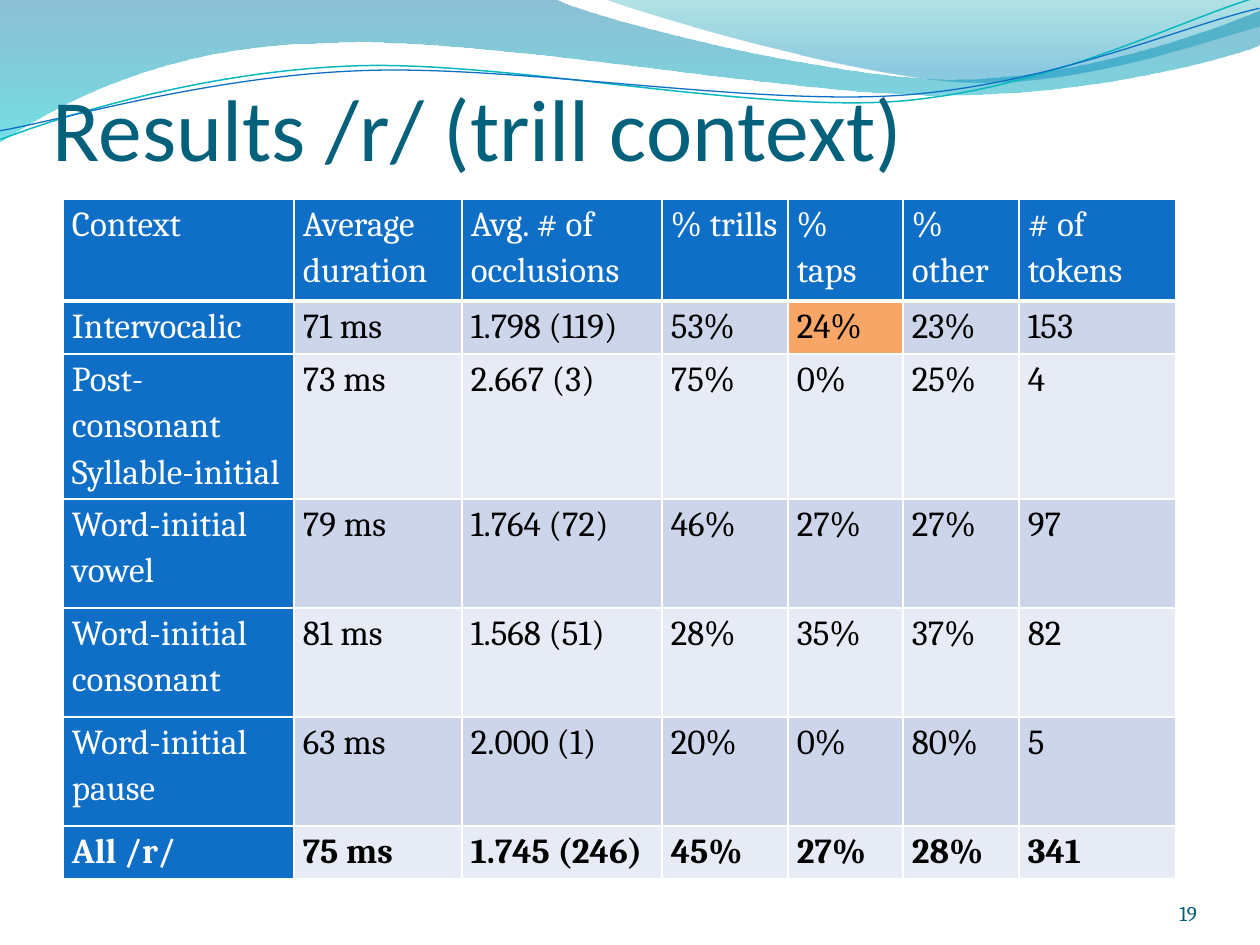
import pptx
import pptx.dml.color
import pptx.enum.text
import pptx.oxml
import pptx.oxml.ns
import pptx.util

PX = 7257
THEME = {
    "title": {"name": "Calibri", "size": 50, "color": "04617B"},
    "number": {"name": "Cambria", "size": 12, "color": "045D75"},
    "header": {"name": "Cambria", "size": 20, "color": "FFFFFF"},
    "body": {"name": "Cambria", "size": 20, "color": "000000"},
    "heading_fill": "0F6FC6",
    "bands": ["CCD5EA", "E7EBF5"],
    "highlight": "F8A668",
    "border": "FFFFFF",
}


def write_text(frame, text, style, paragraph_format, bold=False):
    frame.word_wrap = True
    for index, line in enumerate(text.split("\n")):
        paragraph = frame.paragraphs[0] if index == 0 else frame.add_paragraph()
        for name, value in paragraph_format.items():
            setattr(paragraph, name, value)
        run = paragraph.add_run()
        run.text = line
        font_values = {"name": style["name"], "size": pptx.util.Pt(style["size"]), "bold": bold}
        for name, value in font_values.items():
            setattr(run.font, name, value)
        run.font.color.rgb = pptx.dml.color.RGBColor.from_string(style["color"])


def trace_outline(shapes, start, segments, close):
    points = [segment[i:i + 2] for segment in segments for i in range(0, len(segment), 2)]
    builder = shapes.build_freeform(*start, scale=float(PX))
    builder.add_line_segments(points, close=close)
    shape = builder.convert_to_shape()
    shape.shadow.inherit = False
    lines = iter(list(shape._element.iter(pptx.oxml.ns.qn("a:lnTo"))))
    for segment in segments:
        line = next(lines)
        if len(segment) == 6:
            curve = pptx.oxml.parse_xml(f'<a:cubicBezTo {pptx.oxml.ns.nsdecls("a")}/>')
            line.addprevious(curve)
            for part in (line, next(lines), next(lines)):
                curve.append(part[0])
                part.getparent().remove(part)
    return shape


presentation = pptx.Presentation()
presentation.slide_width = 1260 * PX
presentation.slide_height = 945 * PX
slide = presentation.slides.add_slide(presentation.slide_layouts[6])

waves = [
    ((0, 0), [(554, -1), (600, 21, 837, 79, 955, 79), (1075, 79, 1207, 33, 1260, 11), (1261, 45),
              (1239, 55, 1096, 96, 940, 95), (784, 95, 481, 35, 324, 43), (163, 45, 58, 105, -1, 142)],
     [(0, "0074A1", 45), (1, "00C6CF", 55)]),
    ((604, -1), [(641, 14, 859, 78, 969, 82), (1079, 86, 1211, 40, 1260, 26), (1260, 0)],
     [(0, "00A1A9", 30), (0.8, "008BBF", 45)]),
]
for start, segments, stops in waves:
    wave = trace_outline(slide.shapes, start, segments, True)
    wave.line.fill.background()
    wave.fill.gradient()
    wave.fill.gradient_angle = 270
    for stop, (position, color, opacity) in zip(wave.fill.gradient_stops, stops):
        stop.position = position
        stop.color.rgb = pptx.dml.color.RGBColor.from_string(color)
    for element, (position, color, opacity) in zip(wave._element.iter(pptx.oxml.ns.qn("a:srgbClr")), stops):
        element.append(pptx.oxml.parse_xml(
            f'<a:alpha {pptx.oxml.ns.nsdecls("a")} val="{opacity * 1000}"/>'))

strands = [
    ((-2, 110), [(58, 90, 200, 52, 350, 53), (499, 53, 745, 118, 896, 114), (1048, 109, 1184, 45, 1260, 27)],
     "0AB8BF", 0.85),
    ((-2, 101), [(57, 94, 207, 57, 357, 58), (509, 58, 750, 112, 902, 108), (1052, 104, 1184, 52, 1262, 38)],
     "0F6FC6", 0.75),
]
for start, segments, color, width in strands:
    strand = trace_outline(slide.shapes, start, segments, False)
    strand.rotation = 357.3
    strand.fill.background()
    strand.line.color.rgb = pptx.dml.color.RGBColor.from_string(color)
    strand.line.width = pptx.util.Pt(width)

labels = [
    ("Results /r/ (trill context)", (53, 21, 1134, 158), 6, "title", pptx.enum.text.PP_ALIGN.LEFT),
    ("19", (1092, 876, 105, 50), 0, "number", pptx.enum.text.PP_ALIGN.RIGHT),
]
for text, box, top_inset, style, alignment in labels:
    frame = slide.shapes.add_textbox(*[length * PX for length in box]).text_frame
    frame_format = {
        "margin_left": 0, "margin_right": 0, "margin_top": top_inset * PX, "margin_bottom": 0,
        "vertical_anchor": pptx.enum.text.MSO_ANCHOR.BOTTOM,
    }
    for name, value in frame_format.items():
        setattr(frame, name, value)
    write_text(frame, text, THEME[style], {"alignment": alignment})

rows = [
    ["Context", "Average duration", "Avg. # of occlusions", "% trills", "% taps", "% other", "# of tokens"],
    ["Intervocalic", "71 ms", "1.798 (119)", "53%", "24%", "23%", "153"],
    ["Post-consonant\nSyllable-initial", "73 ms", "2.667 (3)", "75%", "0%", "25%", "4"],
    ["Word-initial vowel", "79 ms", "1.764 (72)", "46%", "27%", "27%", "97"],
    ["Word-initial consonant", "81 ms", "1.568 (51)", "28%", "35%", "37%", "82"],
    ["Word-initial pause", "63 ms", "2.000 (1)", "20%", "0%", "80%", "5"],
    ["All /r/", "75 ms", "1.745 (246)", "45%", "27%", "28%", "341"],
]
column_widths = [231, 168, 200, 126, 115, 116, 157]
row_heights = [102, 53, 126, 109, 109, 109, 53]
table = slide.shapes.add_table(
    len(rows), len(column_widths), 63 * PX, 199 * PX,
    sum(column_widths) * PX, sum(row_heights) * PX).table
table.first_col = True
for column, width in zip(table.columns, column_widths):
    column.width = width * PX
for row, height in zip(table.rows, row_heights):
    row.height = height * PX

cell_format = {"margin_left": 9 * PX, "margin_right": 9 * PX, "margin_top": 0, "margin_bottom": 0}
header_borders = {"L": 1, "R": 1, "T": 1, "B": 3}
for row_index, row in enumerate(rows):
    for column_index, text in enumerate(row):
        cell = table.cell(row_index, column_index)
        for name, value in cell_format.items():
            setattr(cell, name, value)
        is_heading = row_index == 0 or column_index == 0
        write_text(cell.text_frame, text, THEME["header" if is_heading else "body"],
                   {"line_spacing": 1.15}, bold=row_index == len(rows) - 1)
        for side, width in header_borders.items() if row_index == 0 else ():
            cell._tc.get_or_add_tcPr().append(pptx.oxml.parse_xml(
                f'<a:ln{side} {pptx.oxml.ns.nsdecls("a")} w="{pptx.util.Pt(width)}"><a:solidFill>'
                f'<a:srgbClr val="{THEME["border"]}"/></a:solidFill></a:ln{side}>'))
        fill = THEME["heading_fill"] if is_heading else THEME["bands"][(row_index - 1) % 2]
        if (row_index, column_index) == (1, 4):
            fill = THEME["highlight"]
        cell.fill.solid()
        cell.fill.fore_color.rgb = pptx.dml.color.RGBColor.from_string(fill)

presentation.save("out.pptx")
